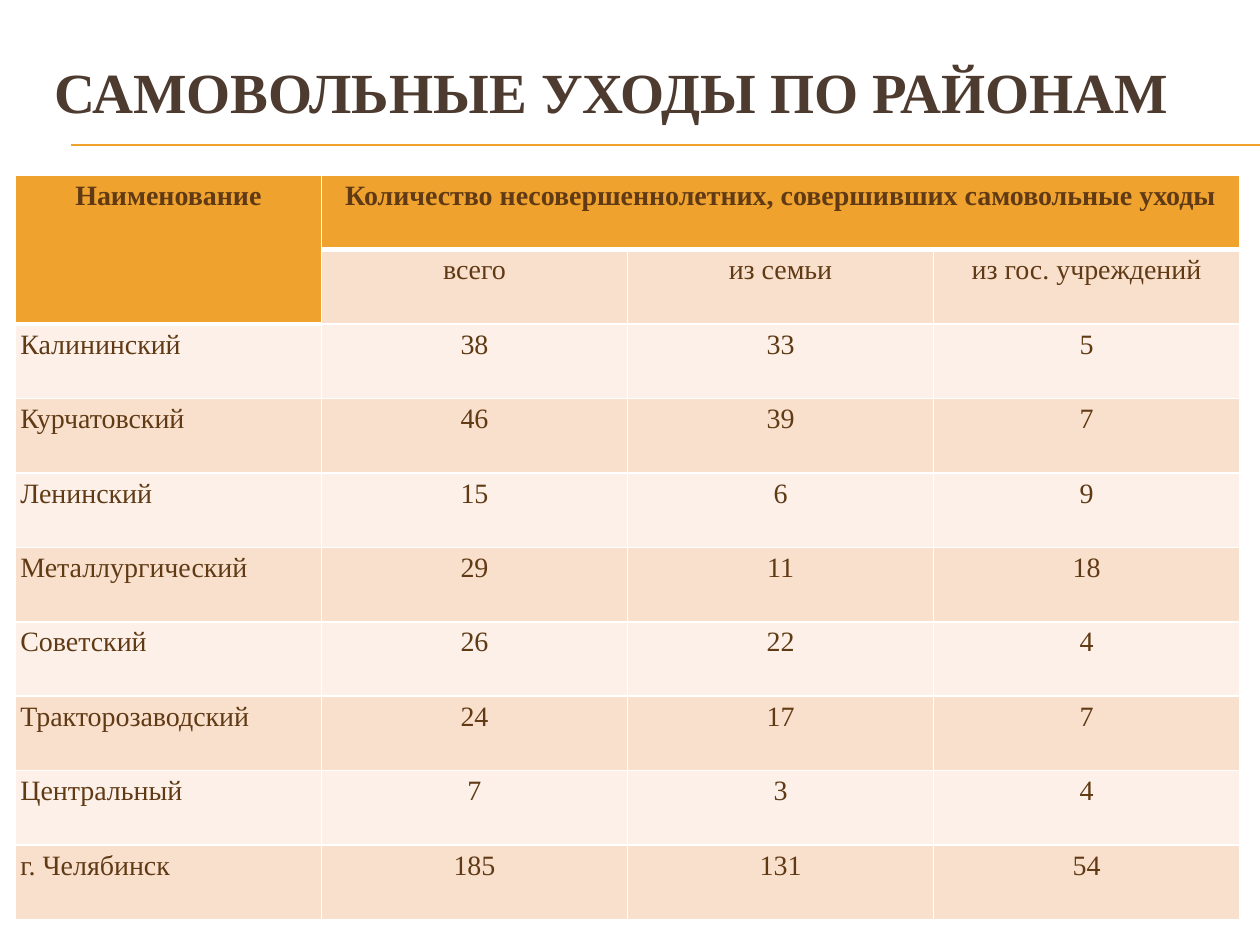
from lxml.etree import SubElement as Sub
from pptx import Presentation
from pptx.dml.color import RGBColor as Rgb
from pptx.enum.shapes import MSO_CONNECTOR as Conn
from pptx.enum.text import MSO_ANCHOR as Anchor, PP_ALIGN as Align
from pptx.oxml.ns import qn
from pptx.util import Pt

FONT = "Times New Roman"
COLORS = {
    "title": "4E3B30",
    "text": "603A14",
    "head": "F0A22E",
    "dark": "F9E0CD",
    "light": "FCF0E8",
    "edge": "FFFFFF",
}
TITLE = "САМОВОЛЬНЫЕ УХОДЫ ПО РАЙОНАМ"
ROWS = [
    ("Наименование", "Количество несовершеннолетних, совершивших самовольные уходы", "", ""),
    ("", "всего", "из семьи", "из гос. учреждений"),
    ("Калининский", 38, 33, 5),
    ("Курчатовский", 46, 39, 7),
    ("Ленинский", 15, 6, 9),
    ("Металлургический", 29, 11, 18),
    ("Советский", 26, 22, 4),
    ("Тракторозаводский", 24, 17, 7),
    ("Центральный", 7, 3, 4),
    ("г. Челябинск", 185, 131, 54),
]


def paint(name):
    return Rgb.from_string(COLORS[name])


def add_run(para, text, size, color, bold):
    run = para.add_run()
    run.text = text
    font = run.font
    font.name, font.size, font.bold = FONT, Pt(size), bold
    font.color.rgb = paint(color)


def add_title(slide, left, top, width, height):
    box = slide.shapes.add_textbox(Pt(left), Pt(top), Pt(width), Pt(height))
    frame = box.text_frame
    frame.word_wrap = True
    frame.vertical_anchor = Anchor.MIDDLE
    add_run(frame.paragraphs[0], TITLE, 32.4, "title", True)


def add_rules(slide, left, top, width, gap):
    for y in (top, top + gap):
        line = slide.shapes.add_connector(
            Conn.STRAIGHT, Pt(left), Pt(y), Pt(left + width), Pt(y))
        line.line.color.rgb = paint("head")
        line.line.width = Pt(0.75)
        Sub(line._element.spPr, qn("a:effectLst"))


def add_edges(cell, sides):
    props = cell._tc.get_or_add_tcPr()
    for side, width in sides.items():
        edge = Sub(props, qn(f"a:ln{side}"), w=str(Pt(width)))
        fill = Sub(edge, qn("a:solidFill"))
        Sub(fill, qn("a:srgbClr"), val=COLORS["edge"])


def is_head(row, col):
    return row == 0 or (row == 1 and col == 0)


def style_cell(cell, row, col, text):
    head = is_head(row, col)
    above = row > 0 and is_head(row - 1, col) and not head
    low = head and not is_head(row + 1, col)
    add_edges(cell, {"L": 1, "R": 1, "T": 3 if above else 1, "B": 3 if low else 1})
    cell.fill.solid()
    cell.fill.fore_color.rgb = paint("head" if head else "dark" if row % 2 else "light")
    cell.margin_left = cell.margin_right = Pt(2.88)
    cell.margin_top = cell.margin_bottom = Pt(2.88)
    if text != "":
        para = cell.text_frame.paragraphs[0]
        para.alignment = Align.JUSTIFY if col == 0 and not head else Align.CENTER
        add_run(para, str(text), 16, "text", head)


def add_grid(slide, left, top, width, height):
    count, span = len(ROWS), len(ROWS[0])
    table = slide.shapes.add_table(
        count, span, Pt(left), Pt(top), Pt(width), Pt(height)).table
    for col in table.columns:
        col.width = Pt(width / span)
    for row in table.rows:
        row.height = Pt(height / count)
    table.cell(0, 0).merge(table.cell(1, 0))
    table.cell(0, 1).merge(table.cell(0, span - 1))
    for row, texts in enumerate(ROWS):
        for col, text in enumerate(texts):
            style_cell(table.cell(row, col), row, col, text)


def main():
    deck = Presentation()
    deck.slide_width, deck.slide_height = Pt(720), Pt(540)
    slide = deck.slides.add_slide(deck.slide_layouts[6])
    add_rules(slide, 40.5, 82.8, 679.5, 0.5)
    add_title(slide, 23.8, 15.1, 684, 73.4)
    add_grid(slide, 8.8, 100.2, 699.6, 425.4)
    deck.save("out.pptx")


if __name__ == "__main__":
    main()
